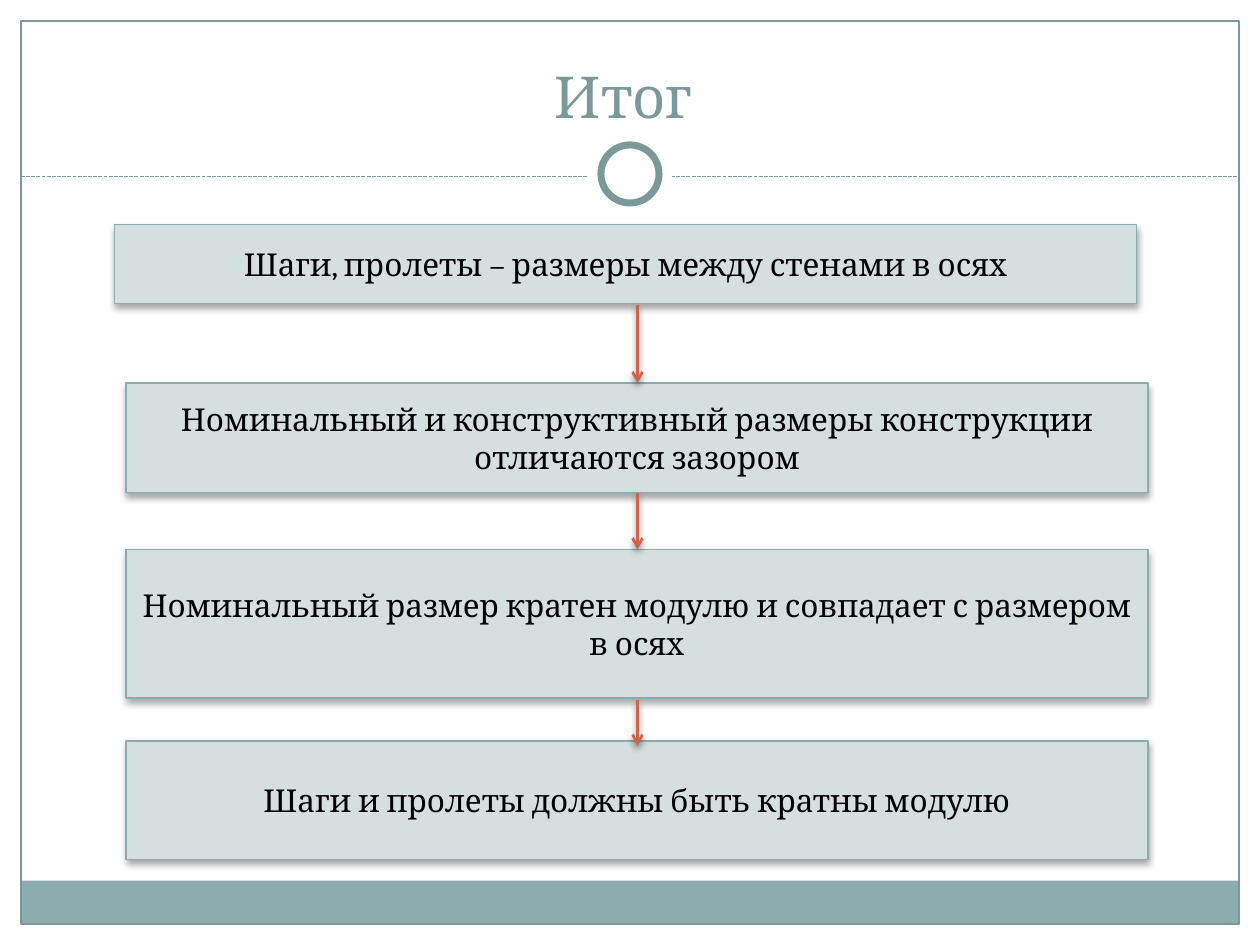
from lxml import etree
from pptx import Presentation
from pptx.dml.color import RGBColor
from pptx.enum import dml, shapes, text
from pptx.oxml.ns import qn
from pptx.util import Pt

FONT = "Cambria"
COLORS = {
    "white": "FFFFFF",
    "frame": "7C999A",
    "accent": "8CADAE",
    "box": "D5DFDF",
    "arrow": "D16349",
    "text": "000000",
}
BOX_WIDTH = 584
ARROW_X = 364.3

# text, left, top, height
BOXES = [
    ("Шаги, пролеты – размеры между стенами в осях", 65.5, 128.2, 45.4),
    ("Номинальный и конструктивный размеры конструкции отличаются зазором", 72, 218.9, 62.6),
    ("Номинальный размер кратен модулю и совпадает с размером в осях", 72, 313.9, 85),
    ("Шаги и пролеты должны быть кратны модулю", 72, 423.4, 67.7),
]
# top, bottom
ARROWS = [(174.2, 218.9), (281.5, 313.9), (400.3, 426.2)]


def rgb(name):
    return RGBColor.from_string(COLORS[name])


def add_shadow(s, opacity=None):
    """Give a shape or connector a soft drop shadow, or none at all."""
    sp_pr = s._element.spPr
    for old in sp_pr.findall(qn("a:effectLst")):
        sp_pr.remove(old)
    effects = etree.SubElement(sp_pr, qn("a:effectLst"))
    if opacity:
        shadow = etree.SubElement(effects, qn("a:outerShdw"), blurRad=str(Pt(4)),
                                  dist=str(Pt(2)), dir="5400000", rotWithShape="0")
        color = etree.SubElement(shadow, qn("a:srgbClr"), val=COLORS["text"])
        etree.SubElement(color, qn("a:alpha"), val=str(opacity * 1000))


def add_shape(slide, kind, box, fill=None, line=None, width=0.75, shadow=None):
    sp = slide.shapes.add_shape(kind, *map(Pt, box))
    if fill:
        sp.fill.solid()
        sp.fill.fore_color.rgb = rgb(fill)
    else:
        sp.fill.background()
    if line:
        sp.line.color.rgb = rgb(line)
        sp.line.width = Pt(width)
    else:
        sp.line.fill.background()
    add_shadow(sp, shadow)
    return sp


def add_line(slide, x1, y1, x2, y2, color, width):
    c = slide.shapes.add_connector(shapes.MSO_CONNECTOR.STRAIGHT, *map(Pt, (x1, y1, x2, y2)))
    c.line.color.rgb = rgb(color)
    c.line.width = Pt(width)
    add_shadow(c)
    return c


def add_arrow(slide, top, bottom):
    c = add_line(slide, ARROW_X, top, ARROW_X, bottom, "arrow", 1.57)
    etree.SubElement(c.line._get_or_add_ln(), qn("a:tailEnd"), type="arrow")
    add_shadow(c, 45)


def format_text(tf, content, size, color, anchor):
    tf.word_wrap = True
    tf.vertical_anchor = anchor
    p = tf.paragraphs[0]
    p.text = content
    p.alignment = text.PP_ALIGN.CENTER
    p.font.name = FONT
    p.font.size = Pt(size)
    p.font.color.rgb = rgb(color)


def add_box(slide, content, left, top, height):
    sp = add_shape(slide, shapes.MSO_SHAPE.RECTANGLE, (left, top, BOX_WIDTH, height),
                   "box", "accent", shadow=35)
    format_text(sp.text_frame, content, 18, "text", text.MSO_ANCHOR.MIDDLE)


def add_frame(slide):
    rect, oval = shapes.MSO_SHAPE.RECTANGLE, shapes.MSO_SHAPE.OVAL
    # White margins and bottom band
    for box in ((0, 0, 720, 109.4), (0, 0, 12, 540), (708, 0, 12, 540)):
        add_shape(slide, rect, box, "white")
    add_shape(slide, rect, (11.8, 503.3, 695.8, 24.5), "accent")
    # Border and dashed divider with a ring
    add_shape(slide, rect, (12, 12, 696, 516), line="frame")
    divider = add_line(slide, 12, 100.8, 708, 100.8, "frame", 0.75)
    divider.line.dash_style = dml.MSO_LINE.SQUARE_DOT
    add_shape(slide, oval, (336, 75.6, 48, 48), "white")
    add_shape(slide, oval, (343.4, 82.8, 33.2, 33.2), "white", "frame", 4)


def add_title(slide, content):
    title = slide.shapes.title
    title.left, title.top, title.width, title.height = map(Pt, (24, 18, 672, 60))
    format_text(title.text_frame, content, 33, "frame", text.MSO_ANCHOR.BOTTOM)
    # Bring the title in front of the white margins
    slide.shapes._spTree.append(title._element)


def main():
    prs = Presentation()
    prs.slide_width, prs.slide_height = Pt(720), Pt(540)
    slide = prs.slides.add_slide(prs.slide_layouts[5])
    add_frame(slide)
    add_title(slide, "Итог ")
    # Chain of conclusions
    for box in BOXES:
        add_box(slide, *box)
    for arrow in ARROWS:
        add_arrow(slide, *arrow)
    prs.save("out.pptx")


if __name__ == "__main__":
    main()
